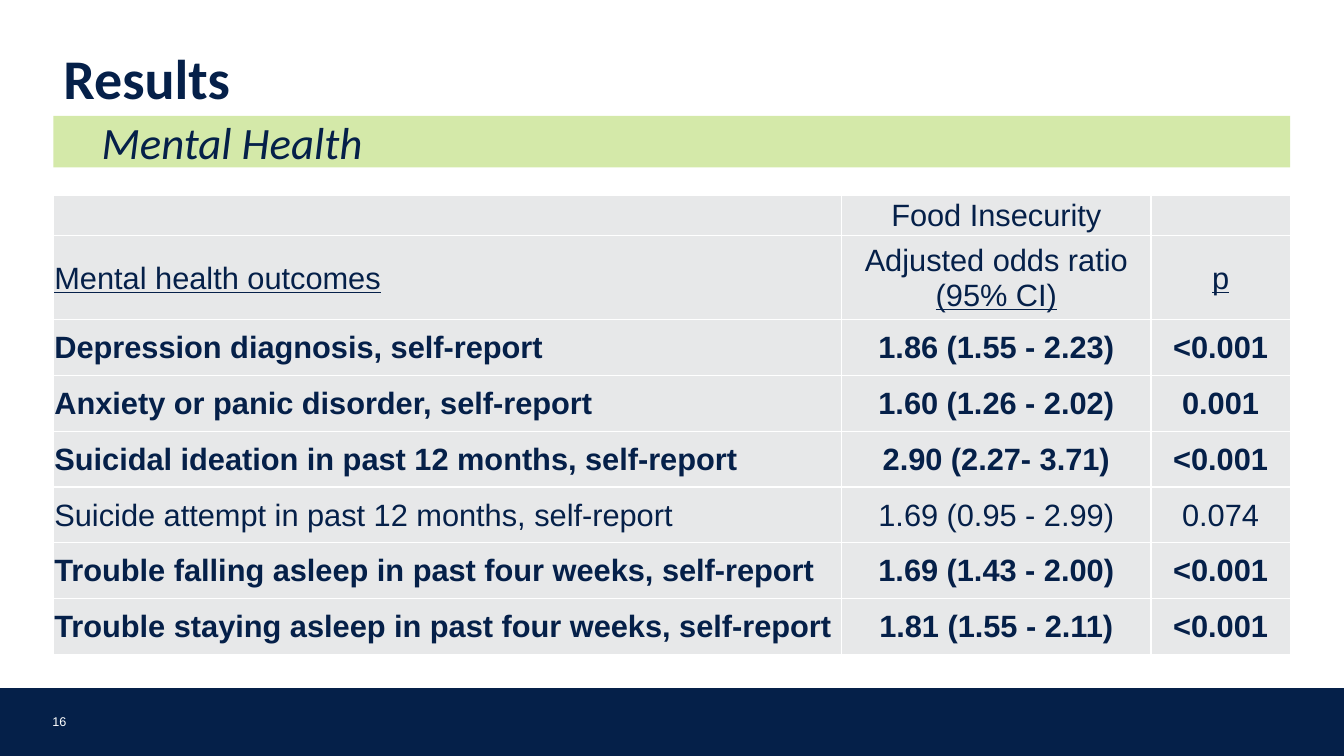
from dataclasses import dataclass

from lxml import etree
from pptx import Presentation
from pptx.dml.color import RGBColor
from pptx.enum.shapes import MSO_SHAPE
from pptx.enum.text import MSO_ANCHOR, PP_ALIGN
from pptx.oxml.ns import qn
from pptx.util import Pt

RECT = MSO_SHAPE.RECTANGLE
TOP, MIDDLE, BOTTOM = MSO_ANCHOR.TOP, MSO_ANCHOR.MIDDLE, MSO_ANCHOR.BOTTOM
LEFT, CENTER = PP_ALIGN.LEFT, PP_ALIGN.CENTER


@dataclass(frozen=True)
class Theme:
    """Colours, fonts and type sizes of the deck."""
    navy: str = "052049"
    green: str = "D4E9A9"
    grey: str = "E7E8E9"
    white: str = "FFFFFF"
    heading: str = "Calibri"
    body: str = "Arial"
    title_size: int = 40
    subtitle_size: int = 32
    table_size: int = 22
    number_size: int = 9


T = Theme()
SLIDE_W, SLIDE_H = 960, 540
MARGIN, CONTENT_W = 38.16, 883.44
COLS = [563.04, 221.04, 99.36]
ROWS = [28.8, 60] + [39.8] * 6
HEADER = [
    ["", "Food Insecurity", ""],
    ["Mental health outcomes", "Adjusted odds ratio\n(95% CI)", "p"],
]
OUTCOMES = [
    ("Depression diagnosis, self-report", "1.86 (1.55 - 2.23)", "<0.001"),
    ("Anxiety or panic disorder, self-report", "1.60 (1.26 - 2.02)", "0.001"),
    ("Suicidal ideation in past 12 months, self-report", "2.90 (2.27- 3.71)", "<0.001"),
    ("Suicide attempt in past 12 months, self-report", "1.69 (0.95 - 2.99)", "0.074"),
    ("Trouble falling asleep in past four weeks, self-report", "1.69 (1.43 - 2.00)", "<0.001"),
    ("Trouble staying asleep in past four weeks, self-report", "1.81 (1.55 - 2.11)", "<0.001"),
]
NOT_SIGNIFICANT = "0.074"


def rgb(color):
    """Return a colour object for a hex string."""
    return RGBColor.from_string(color)


def write(tf, text, size, font=T.body, color=T.navy, bold=False, italic=False,
          underline_last=False, align=LEFT, spacing=None, indent=0):
    """Fill a text frame, one paragraph per line of text."""
    lines = text.split("\n")
    for i, line in enumerate(lines):
        p = tf.paragraphs[0] if i == 0 else tf.add_paragraph()
        p.alignment = align
        p.line_spacing = spacing
        if indent:
            p._p.get_or_add_pPr().set("indent", str(Pt(indent)))
        p.font.size = Pt(size)
        if line:
            r = p.add_run()
            r.text = line
            f = r.font
            f.name, f.size, f.bold, f.italic = font, Pt(size), bold, italic
            f.underline = underline_last and i == len(lines) - 1
            f.color.rgb = rgb(color)


def add_bar(s, x, y, w, h, color):
    """Add a plain filled rectangle."""
    sp = s.shapes.add_shape(RECT, Pt(x), Pt(y), Pt(w), Pt(h))
    sp.shadow.inherit = False
    sp.fill.solid()
    sp.fill.fore_color.rgb = rgb(color)
    sp.line.fill.background()
    return sp


def add_title(s, x, y, w, h):
    """Place and format the title placeholder."""
    sp = s.shapes.title
    sp.left, sp.top, sp.width, sp.height = Pt(x), Pt(y), Pt(w), Pt(h)
    sp.text_frame.vertical_anchor = MIDDLE
    write(sp.text_frame, "Results", T.title_size, font=T.heading, bold=True, spacing=0.85)


def add_subtitle(s, x, y, w, h):
    """Add the green subtitle band."""
    tf = add_bar(s, x, y, w, h, T.green).text_frame
    tf.vertical_anchor = TOP
    write(tf, "Mental Health", T.subtitle_size, font=T.heading, italic=True,
          spacing=0.9, indent=27.36)


def add_footer(s, x, y, w, h):
    """Add the navy footer with its slide number."""
    bar = add_bar(s, x, y, w, h, T.navy)
    bar.line.color.rgb = rgb(T.navy)
    bar.line.width = Pt(1.5)
    tf = s.shapes.add_textbox(Pt(x + 37.44), Pt(y + 15.84), Pt(25.92), Pt(12.24)).text_frame
    tf.word_wrap = True
    tf.margin_left = tf.margin_right = tf.margin_top = tf.margin_bottom = 0
    tf.vertical_anchor = BOTTOM
    write(tf, "16", T.number_size, color=T.white)


def format_cell(cell):
    """Set the fill, margins and white borders of a table cell."""
    cell.vertical_anchor = MIDDLE
    cell.margin_left = cell.margin_right = cell.margin_top = Pt(0.72)
    cell.margin_bottom = 0
    cell.fill.solid()
    cell.fill.fore_color.rgb = rgb(T.grey)
    tc_pr = cell._tc.get_or_add_tcPr()
    for i, side in enumerate(("a:lnL", "a:lnR", "a:lnT", "a:lnB")):
        ln = etree.Element(qn(side), w=str(Pt(1)))
        fill = etree.SubElement(ln, qn("a:solidFill"))
        etree.SubElement(fill, qn("a:srgbClr"), val=T.white)
        tc_pr.insert(i, ln)


def add_results(s, x, y, w):
    """Add the table of adjusted odds ratios."""
    cells = HEADER + OUTCOMES
    table = s.shapes.add_table(len(ROWS), len(COLS), Pt(x), Pt(y), Pt(w), Pt(sum(ROWS))).table
    table.first_row = table.horz_banding = False
    for column, width in zip(table.columns, COLS):
        column.width = Pt(width)
    for i, (row, height) in enumerate(zip(table.rows, ROWS)):
        row.height = Pt(height)
        bold = i >= len(HEADER) and cells[i][2] != NOT_SIGNIFICANT
        for j, cell in enumerate(row.cells):
            format_cell(cell)
            write(cell.text_frame, cells[i][j], T.table_size, bold=bold,
                  underline_last=i == 1, align=CENTER if j else LEFT)


def main():
    """Build and save the slide."""
    prs = Presentation()
    prs.slide_width, prs.slide_height = Pt(SLIDE_W), Pt(SLIDE_H)
    s = prs.slides.add_slide(prs.slide_layouts.get_by_name("Title Only"))
    add_footer(s, 0, 492.48, SLIDE_W, 47.52)
    add_results(s, MARGIN, 139.68, CONTENT_W)
    add_subtitle(s, MARGIN, 82.8, CONTENT_W, 36.72)
    add_title(s, MARGIN, 34.56, 637.2, 48.96)
    prs.save("out.pptx")


if __name__ == "__main__":
    main()
